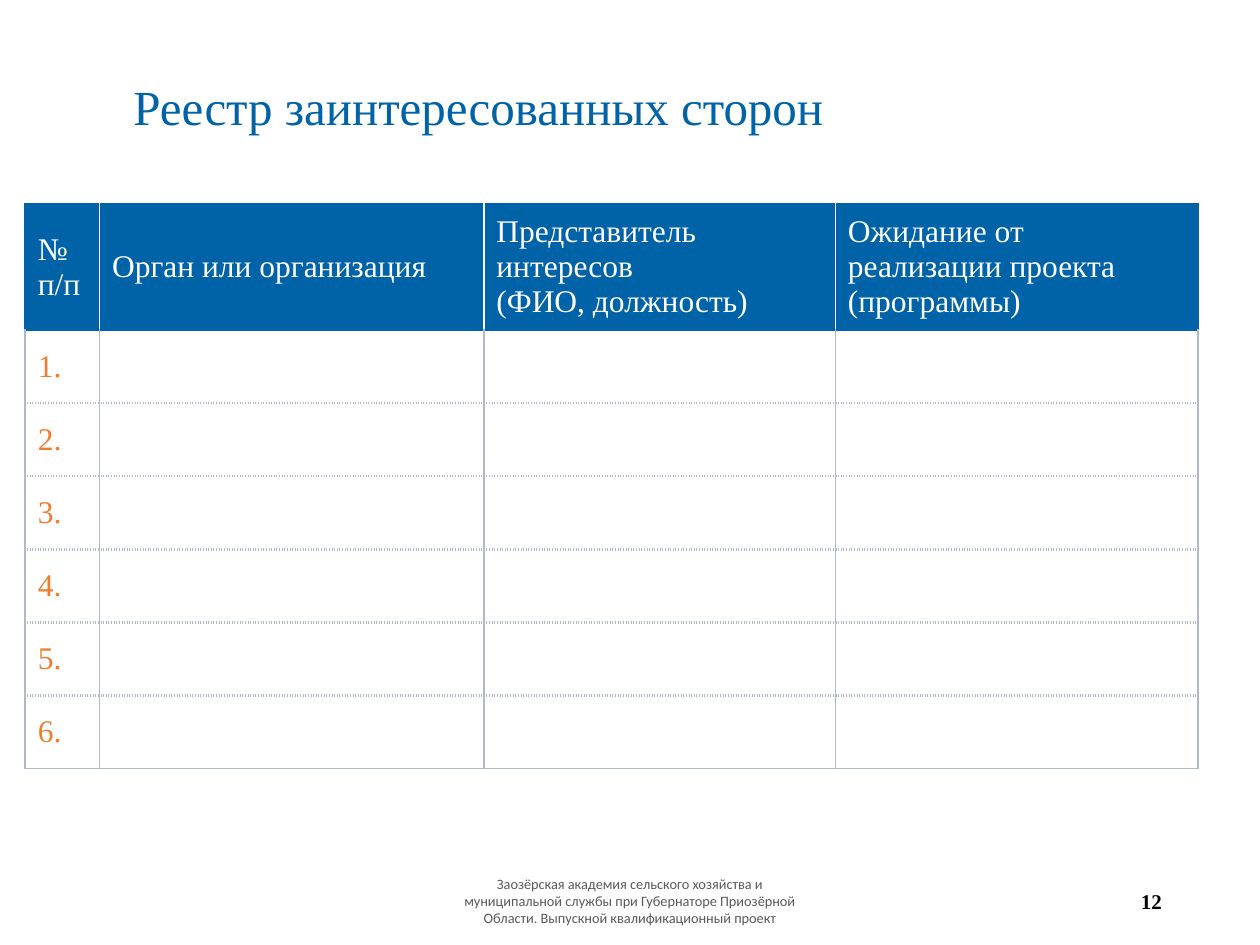
from dataclasses import dataclass

from lxml.etree import SubElement
from pptx import Presentation
from pptx.dml.color import RGBColor
from pptx.enum.text import MSO_ANCHOR, PP_ALIGN
from pptx.oxml.ns import qn
from pptx.util import Inches, Pt

WIDE, HIGH = Inches(10), Inches(7.5)


@dataclass(frozen=True)
class Theme:
    serif: str = "Times New Roman"
    sans: str = "Calibri"
    blue: str = "0062A7"
    orange: str = "ED7D31"
    rule: str = "B0B9CB"
    white: str = "FFFFFF"
    black: str = "000000"
    gray: str = "595959"
    title: float = 28
    body: float = 18
    page: float = 12
    foot: float = 8.2


THEME = Theme()
COLS = (0.59, 3.05, 2.79, 2.88)
HEADS = (
    ("№", "п/п"),
    ("Орган или организация",),
    ("Представитель интересов\v(ФИО, должность)",),
    ("Ожидание от реализации проекта (программы)",),
)
COUNT = 6


def add_run(para, text, size, color, font=THEME.serif, bold=False):
    # A vertical tab marks a line break inside a paragraph
    for i, part in enumerate(text.split("\v")):
        if i:
            para.add_line_break()
        run = para.add_run()
        run.text = part
        run.font.name = font
        run.font.size = Pt(size)
        run.font.bold = bold
        run.font.color.rgb = RGBColor.from_string(color)


def add_text(slide, box, text, size, color, align, anchor, side=0.1, **look):
    """Box is left, top, width, height as shares of the slide."""
    x, y, w, h = box
    shape = slide.shapes.add_textbox(
        int(x * WIDE), int(y * HIGH), int(w * WIDE), int(h * HIGH))
    frame = shape.text_frame
    frame.word_wrap = True
    frame.vertical_anchor = anchor
    frame.margin_left = frame.margin_right = Inches(side)
    para = frame.paragraphs[0]
    para.alignment = align
    add_run(para, text, size, color, **look)
    return para


def add_edge(cell, side, color, width=1.0, dash="solid"):
    line = SubElement(cell._tc.get_or_add_tcPr(), qn("a:ln" + side),
                      w=str(Pt(width)))
    fill = SubElement(line, qn("a:solidFill"))
    SubElement(fill, qn("a:srgbClr"), val=color)
    SubElement(line, qn("a:prstDash"), val=dash)


def add_edges(cell, row, col):
    head = row == 0
    dots = (THEME.rule, 1.5, "sysDot")
    side = THEME.white if head else THEME.rule
    ends = THEME.blue if head else THEME.rule
    add_edge(cell, "L", ends if col == 0 else side)
    add_edge(cell, "R", ends if col == len(COLS) - 1 else side)
    if row < 2:
        add_edge(cell, "T", THEME.blue)
    else:
        add_edge(cell, "T", *dots)
    if head or row == COUNT:
        add_edge(cell, "B", ends)
    else:
        add_edge(cell, "B", *dots)


def fill_cell(cell, lines, color, back):
    cell.vertical_anchor = MSO_ANCHOR.MIDDLE
    cell.fill.solid()
    cell.fill.fore_color.rgb = RGBColor.from_string(back)
    frame = cell.text_frame
    for i, line in enumerate(lines):
        para = frame.add_paragraph() if i else frame.paragraphs[0]
        add_run(para, line, THEME.body, color)


def add_grid(slide):
    rows = (0.93,) + (0.58,) * COUNT
    grid = slide.shapes.add_table(
        len(rows), len(COLS), Inches(0.2), Inches(1.62),
        Inches(sum(COLS)), Inches(sum(rows))).table
    grid.horz_banding = False
    for col, width in zip(grid.columns, COLS):
        col.width = Inches(width)
    for r, high in enumerate(rows):
        grid.rows[r].height = Inches(high)
        for c in range(len(COLS)):
            cell = grid.cell(r, c)
            # Borders go before the fill in the cell's properties
            add_edges(cell, r, c)
            if r == 0:
                fill_cell(cell, HEADS[c], THEME.white, THEME.blue)
            else:
                lines = (f"{r}.",) if c == 0 else ()
                fill_cell(cell, lines, THEME.orange, THEME.white)


def main():
    deck = Presentation()
    deck.slide_width, deck.slide_height = WIDE, HIGH
    slide = deck.slides.add_slide(deck.slide_layouts[6])

    # Title
    title = add_text(slide, (0.096, 0.016, 0.742, 0.135),
                     "Реестр заинтересованных сторон", THEME.title,
                     THEME.blue, PP_ALIGN.LEFT, MSO_ANCHOR.BOTTOM)
    title.line_spacing = 0.9

    # Register of parties
    add_grid(slide)

    # Footer and page number
    add_text(slide, (0.331, 0.927, 0.338, 0.053),
             "Заозёрская академия сельского хозяйства и муниципальной службы "
             "при Губернаторе Приозёрной Области. "
             "Выпускной квалификационный проект",
             THEME.foot, THEME.gray, PP_ALIGN.CENTER, MSO_ANCHOR.MIDDLE,
             side=0.3, font=THEME.sans)
    add_text(slide, (0.707, 0.927, 0.225, 0.053), "12", THEME.page,
             THEME.black, PP_ALIGN.RIGHT, MSO_ANCHOR.MIDDLE, bold=True)

    deck.save("out.pptx")


if __name__ == "__main__":
    main()
